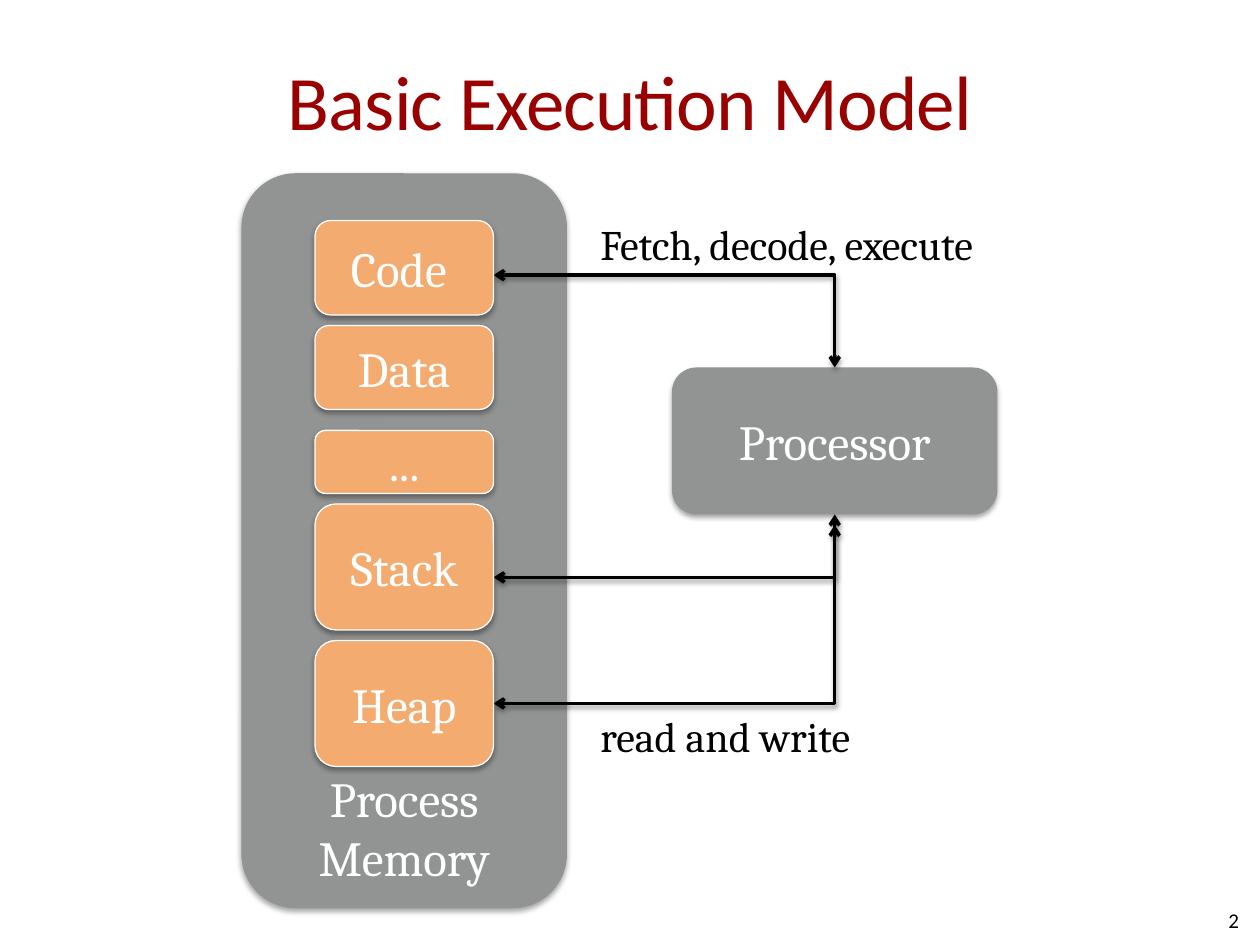
"""Builds the Basic Execution Model slide on a grid of twelve units to the inch."""
from lxml import etree
from pptx import Presentation
from pptx import util as u
from pptx.dml.color import RGBColor
from pptx.enum import shapes, text
from pptx.oxml.ns import qn

GREY, ORANGE, WHITE, BLACK, RED = "929393", "F4AB70", "FFFFFF", "000000", "990000"
MID, BOTTOM = text.MSO_ANCHOR.MIDDLE, text.MSO_ANCHOR.BOTTOM
LEFT, CENTER, RIGHT = text.PP_ALIGN.LEFT, text.PP_ALIGN.CENTER, text.PP_ALIGN.RIGHT

PANELS = [("Process\nMemory", (23, 16.5, 31, 70), BOTTOM),
          ("Processor", (64, 35, 31, 14), MID)]
SEGMENT_LEFT, SEGMENT_WIDTH = 30, 17
SEGMENTS = [("Code ", 21, 9), ("Data", 31, 8), ("...", 41, 6),
            ("Stack", 48, 12), ("Heap", 61, 12)]
PROCESSOR_X = 79.5
LINKS = [(26.2, 35), (55, 50), (67, 49)]
LABELS = [("Fetch, decode, execute", (56, 20.2, 41, 6)),
          ("read and write", (56, 67.1, 27.7, 6))]


def grid(*units):
    return [u.Inches(n / 12) for n in units]


def rgb(value):
    return RGBColor.from_string(value)


def write(sp, words, size, font, color, align, anchor, wrap=True):
    tf = sp.text_frame
    tf.word_wrap, tf.vertical_anchor = wrap, anchor
    p = tf.paragraphs[0]
    p.alignment = align
    for i, line in enumerate(words.split("\n")):
        if i:
            p.add_line_break()
        r = p.add_run()
        r.text = line
        r.font.size, r.font.name = u.Pt(size), font
        r.font.color.rgb = rgb(color)
    return tf


def add_shadow(sp, distance, alpha):
    spPr = sp._element.spPr
    effects = spPr.find(qn("a:effectLst"))
    if effects is None:
        effects = etree.SubElement(spPr, qn("a:effectLst"))
    shadow = etree.SubElement(effects, qn("a:outerShdw"), blurRad=str(u.Pt(3.1)),
                              dist=str(u.Pt(distance)), dir="5400000", rotWithShape="0")
    color = etree.SubElement(shadow, qn("a:srgbClr"), val=BLACK)
    etree.SubElement(color, qn("a:alpha"), val=str(alpha * 1000))


def add_box(s, words, box, fill, anchor=MID, outline=None):
    sp = s.shapes.add_shape(shapes.MSO_SHAPE.ROUNDED_RECTANGLE, *grid(*box))
    sp.fill.solid()
    sp.fill.fore_color.rgb = rgb(fill)
    if outline:
        sp.line.color.rgb = rgb(outline)
        sp.line.width = u.Pt(0.75)
    else:
        sp.line.fill.background()
    sp.shadow.inherit = False
    add_shadow(sp, 1.8, 35)
    write(sp, words, 28, "Cambria", WHITE, CENTER, anchor)


def add_link(s, start_y, end_y):
    ends = grid(SEGMENT_LEFT + SEGMENT_WIDTH, start_y, PROCESSOR_X, end_y)
    sp = s.shapes.add_connector(shapes.MSO_CONNECTOR.ELBOW, *ends)
    sp._element.spPr.find(qn("a:prstGeom")).set("prst", "bentConnector2")
    sp.line.color.rgb = rgb(BLACK)
    sp.line.width = u.Pt(2)
    for end in ("a:headEnd", "a:tailEnd"):
        etree.SubElement(sp.line._get_or_add_ln(), qn(end), type="arrow")
    add_shadow(sp, 1.6, 38)


def add_text(s, box, *style, margins=None, **options):
    sp = s.shapes.add_textbox(*grid(*box))
    tf = write(sp, *style, **options)
    if margins is not None:
        tf.margin_left = tf.margin_right = 0
        tf.margin_top = tf.margin_bottom = u.Inches(margins)
    return tf


def main():
    prs = Presentation()
    prs.slide_width, prs.slide_height = u.Inches(10), u.Inches(7.5)
    s = prs.slides.add_slide(prs.slide_layouts[6])
    title = add_text(s, (6, 2, 108, 15), "Basic Execution Model", 44, "Calibri",
                     RED, CENTER, MID, margins=0.05)
    title.paragraphs[0].runs[0].font._element.set("spc", "-50")
    add_text(s, (90, 85.2, 28, 4.8), "2", 12, "Calibri", BLACK, RIGHT, MID, margins=0)
    for words, box, anchor in PANELS:
        add_box(s, words, box, GREY, anchor)
    for start_y, end_y in LINKS:
        add_link(s, start_y, end_y)
    for words, box in LABELS:
        add_text(s, box, words, 24, "Cambria", BLACK, LEFT, text.MSO_ANCHOR.TOP, wrap=False)
    for words, top, height in SEGMENTS:
        add_box(s, words, (SEGMENT_LEFT, top, SEGMENT_WIDTH, height), ORANGE, outline=WHITE)
    prs.save("out.pptx")


if __name__ == "__main__":
    main()
